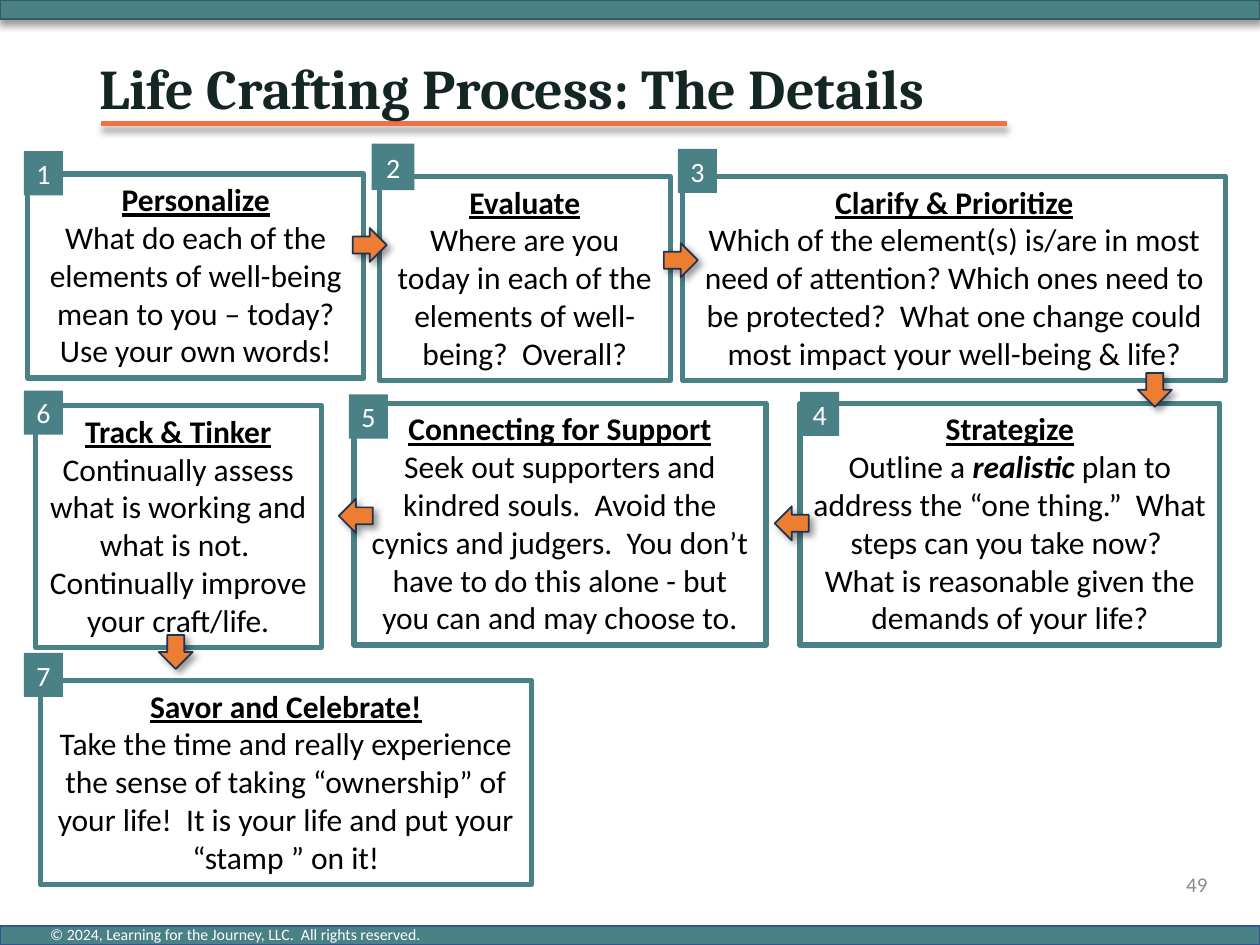
import pptx
import pptx.dml.color
import pptx.enum.shapes
import pptx.enum.text
import pptx.oxml
import pptx.oxml.ns
import pptx.util

Pt = pptx.util.Pt
Shape = pptx.enum.shapes.MSO_SHAPE
Align = pptx.enum.text.PP_ALIGN
Anchor = pptx.enum.text.MSO_ANCHOR
AutoSize = pptx.enum.text.MSO_AUTO_SIZE

TEAL, ORANGE, CORAL = "498187", "ED7D31", "F27141"
BLACK, WHITE = "000000", "FFFFFF"


def color(hex_code):
    return pptx.dml.color.RGBColor.from_string(hex_code)


def add_shadow(shape, angle):
    """Soft 40% black shadow, cast in the given direction in degrees."""
    effects = pptx.oxml.parse_xml(
        f'<a:effectLst {pptx.oxml.ns.nsdecls("a")}>'
        f'<a:outerShdw blurRad="{Pt(4)}" dist="{Pt(3)}" dir="{angle * 60000}" '
        'algn="tl" rotWithShape="0"><a:srgbClr val="000000">'
        '<a:alpha val="40000"/></a:srgbClr></a:outerShdw></a:effectLst>')
    properties = shape.element.spPr
    for old in properties.findall(pptx.oxml.ns.qn("a:effectLst")):
        properties.remove(old)
    properties.append(effects)


class ProcessSlide:
    body_font, title_font = "Calibri", "Cambria"

    def __init__(self, slide):
        self.slide = slide

    def shape(self, kind, left, top, width, height, fill=None, line=None, weight=1):
        shape = self.slide.shapes.add_shape(
            kind, Pt(left), Pt(top), Pt(width), Pt(height))
        shape.shadow.inherit = False
        if fill:
            shape.fill.solid()
            shape.fill.fore_color.rgb = color(fill)
        else:
            shape.fill.background()
        if line:
            shape.line.color.rgb = color(line)
            shape.line.width = Pt(weight)
        else:
            shape.line.fill.background()
        return shape

    def style(self, run, size, hex_code, font=None, bold=False):
        run.font.name = font or self.body_font
        run.font.size = Pt(size)
        run.font.bold = bold
        run.font.color.rgb = color(hex_code)

    def text(self, words, left, top, width, height, size, hex_code, font=None,
             bold=False, align=Align.LEFT, anchor=Anchor.MIDDLE, wrap=True):
        frame = self.slide.shapes.add_textbox(
            Pt(left), Pt(top), Pt(width), Pt(height)).text_frame
        frame.word_wrap = wrap
        frame.vertical_anchor = anchor
        frame.text = words
        paragraph = frame.paragraphs[0]
        paragraph.alignment = align
        self.style(paragraph.runs[0], size, hex_code, font, bold)
        return paragraph

    def bar(self, top, line):
        add_shadow(self.shape(Shape.RECTANGLE, 0, top, 720, 10.8, TEAL, line), 90)

    def rule(self, left, right, y):
        rule = self.slide.shapes.add_connector(
            pptx.enum.shapes.MSO_CONNECTOR.STRAIGHT, Pt(left), Pt(y), Pt(right), Pt(y))
        rule.line.color.rgb = color(CORAL)
        rule.line.width = Pt(3)
        add_shadow(rule, 90)

    def step(self, heading, details, left, top, width, height):
        """Outlined box; words between asterisks are bold italic."""
        frame = self.shape(Shape.RECTANGLE, left, top, width, height,
                           line=TEAL, weight=3).text_frame
        frame.word_wrap = True
        frame.auto_size = AutoSize.SHAPE_TO_FIT_TEXT
        frame.vertical_anchor = Anchor.TOP
        frame.text = heading
        title = frame.paragraphs[0]
        self.style(title.runs[0], 18, BLACK, bold=True)
        title.runs[0].font.underline = True
        body = frame.add_paragraph()
        for index, part in enumerate(details.split("*")):
            run = body.add_run()
            run.text = part
            stressed = index % 2 == 1
            self.style(run, 18, BLACK, bold=stressed)
            run.font.italic = stressed
        title.alignment = body.alignment = Align.CENTER

    def arrow(self, direction, left, top):
        arrow = self.shape(Shape.RIGHT_ARROW, left, top, 19.4, 19.4, ORANGE, "1E3256")
        if direction == "down":
            arrow.rotation = 90
        elif direction == "left":
            arrow.element.spPr.xfrm.set("flipH", "1")
        add_shadow(arrow, 45)

    def badge(self, number, left, top, width=22.3, height=25.2):
        frame = self.shape(Shape.RECTANGLE, left, top, width, height, TEAL).text_frame
        frame.word_wrap = False
        frame.auto_size = AutoSize.SHAPE_TO_FIT_TEXT
        frame.text = str(number)
        frame.paragraphs[0].alignment = Align.CENTER
        self.style(frame.paragraphs[0].runs[0], 16, WHITE)


SHORT, TALL = 116.6, 138.2  # box heights for five and six lines
STEPS = [
    ("Personalize",
     "What do each of the elements of well-being mean to you – today? "
     "Use your own words!", 15.8, 99.4, 192.2, SHORT),
    ("Evaluate",
     "Where are you today in each of the elements of well-being?  Overall?",
     216.7, 100.8, 166.3, SHORT),
    ("Clarify & Prioritize",
     "Which of the element(s) is/are in most need of attention? Which ones need "
     "to be protected?  What one change could most impact your well-being & life?",
     390.2, 100.8, 310.3, SHORT),
    ("Strategize",
     "Outline a *realistic* plan to address the “one thing.”  What steps can you "
     "take now?  What is reasonable given the demands of your life?",
     457.2, 230.4, 239.8, TALL),
    ("Connecting for Support",
     "Seek out supporters and kindred souls.  Avoid the cynics and judgers.  "
     "You don’t have to do this alone - but you can and may choose to.",
     202.3, 230.4, 235.4, TALL),
    ("Track & Tinker",
     "Continually assess what is working and what is not.  "
     "Continually improve your craft/life.", 20.2, 231.8, 163.4, TALL),
    ("Savor and Celebrate!",
     "Take the time and really experience the sense of taking “ownership” of your "
     "life!  It is your life and put your “stamp ” on it!",
     23, 388.8, 280.8, SHORT),
]
ARROWS = [
    ("right", 201.6, 130.3), ("right", 379.4, 139), ("down", 650.2, 213.1),
    ("left", 442.8, 289.4), ("left", 193.7, 285.1), ("down", 90.7, 362.9),
]
BADGES = [
    (13.7, 86.4), (212.4, 82.1, 24.5, 26.6), (387.4, 85), (457.2, 223.9),
    (199.4, 225.4), (13.7, 223.2), (13.7, 373),
]


def main():
    deck = pptx.Presentation()
    deck.slide_width, deck.slide_height = Pt(720), Pt(540)
    page = ProcessSlide(deck.slides.add_slide(deck.slide_layouts[6]))

    # Frame: bars, copyright line, title and page number
    page.bar(0, "335A5E")
    page.bar(529.2, "325491")
    page.text("© 2024, Learning for the Journey, LLC.  All rights reserved.",
              21.6, 524.9, 229, 18, 9, WHITE, anchor=Anchor.TOP, wrap=False)
    page.rule(57.6, 575.3, 70.6)
    title = page.text("Life Crafting Process: The Details", 49.7, 31, 620.6, 41.8,
                      32, "132623", font=page.title_font, bold=True)
    title.line_spacing = 0.9
    page.text("49", 535, 491, 162, 28.8, 12, "8C8C8C", align=Align.RIGHT)

    # Process: boxes, then arrows and numbers on top
    for step in STEPS:
        page.step(*step)
    for arrow in ARROWS:
        page.arrow(*arrow)
    for number, place in enumerate(BADGES, start=1):
        page.badge(number, *place)

    deck.save("out.pptx")


if __name__ == "__main__":
    main()
